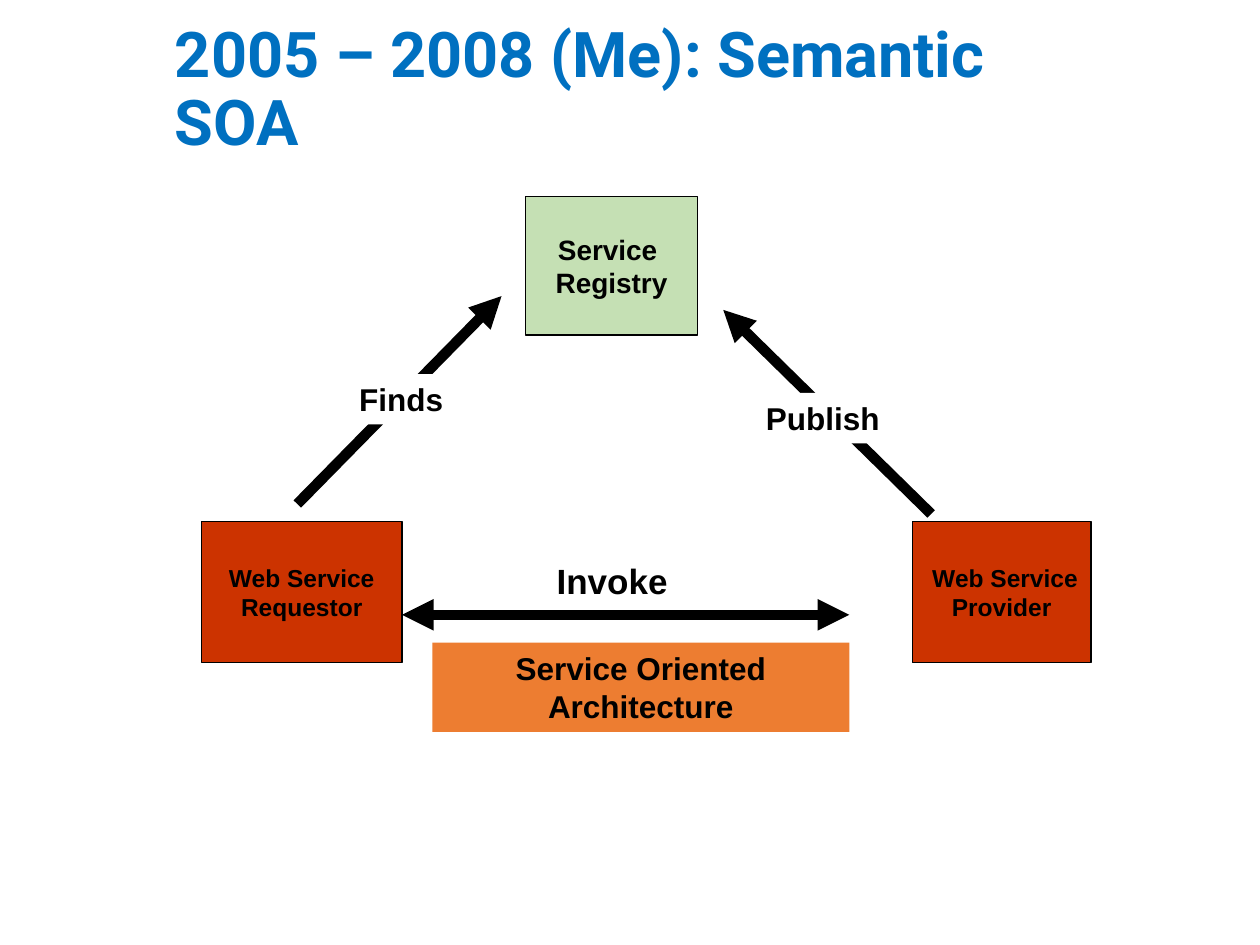
from lxml import etree
from pptx import Presentation
from pptx.dml.color import RGBColor
from pptx.enum import shapes, text
from pptx.oxml.ns import qn
from pptx.util import Pt

BLACK = "000000"
BOX_LINE = 0.75
ARROW_LINE = 6


def colour(value):
    """Turn a hex string into a colour."""
    return RGBColor.from_string(value)


def write(shape, lines, size, font="Arial", ink=BLACK, align=text.PP_ALIGN.CENTER,
          anchor=text.MSO_ANCHOR.TOP, wrap=False):
    """Write bold lines into a shape, one paragraph per line."""
    frame = shape.text_frame
    frame.word_wrap = wrap
    frame.vertical_anchor = anchor
    for number, line in enumerate(lines):
        para = frame.add_paragraph() if number else frame.paragraphs[0]
        para.alignment = align
        span = para.add_run()
        span.text = line
        span.font.name = font
        span.font.size = Pt(size)
        span.font.bold = True
        span.font.color.rgb = colour(ink)


def add_box(group, left, top, width, height, fill, outlined=False):
    """Add a filled rectangle, with a thin black outline on request."""
    box = group.shapes.add_shape(shapes.MSO_SHAPE.RECTANGLE,
                                 Pt(left), Pt(top), Pt(width), Pt(height))
    box.shadow.inherit = False
    box.fill.solid()
    box.fill.fore_color.rgb = colour(fill)
    if outlined:
        box.line.color.rgb = colour(BLACK)
        box.line.width = Pt(BOX_LINE)
    else:
        box.line.fill.background()
    return box


def add_arrow(group, start, end, both_ends=False):
    """Add a thick black arrow, pointing both ways on request."""
    arrow = group.shapes.add_connector(shapes.MSO_CONNECTOR.STRAIGHT,
                                       *map(Pt, start), *map(Pt, end))
    arrow.line.color.rgb = colour(BLACK)
    arrow.line.width = Pt(ARROW_LINE)
    line = arrow.line._get_or_add_ln()
    for tag in ("a:headEnd", "a:tailEnd") if both_ends else ("a:tailEnd",):
        etree.SubElement(line, qn(tag), type="triangle")
    etree.SubElement(arrow._element.spPr, qn("a:effectLst"))


def add_title(page, left, top, width, height):
    """Add the slide title."""
    title = page.shapes.add_textbox(Pt(left), Pt(top), Pt(width), Pt(height))
    write(title, ["2005 – 2008 (Me): Semantic SOA"], 36, "Roboto", "0070C0",
          text.PP_ALIGN.LEFT, text.MSO_ANCHOR.MIDDLE, True)
    title.text_frame.paragraphs[0].line_spacing = 0.9


def add_triangle(page, left, top):
    """Add the service triangle: three roles, their links and the caption."""
    group = page.shapes.add_group_shape()
    roles = [
        (406.1, 185.8, 102.2, 80.6, "CC3300", [" Web Service", "Provider"], 14),
        (0, 185.8, 114.5, 80.6, "CC3300", ["Web Service", "Requestor"], 14),
        (185, 0, 98.6, 79.2, "C5E0B4", ["Service ", "Registry"], 16),
    ]
    for x, y, width, height, fill, lines, size in roles:
        role = add_box(group, left + x, top + y, width, height, fill, True)
        write(role, lines, size, anchor=text.MSO_ANCHOR.MIDDLE)

    links = [
        ((114.5, 239), (370.1, 239), True),
        ((54.7, 175.7), (171.4, 56.9), False),
        ((416.9, 181.4), (298.1, 64.8), False),
    ]
    for (x1, y1), (x2, y2), both_ends in links:
        add_arrow(group, (left + x1, top + y1), (left + x2, top + y2), both_ends)

    labels = [(82.8, 101.5, 62.6, "Finds"), (315.4, 112.3, 79.2, "Publish")]
    for x, y, width, label in labels:
        write(add_box(group, left + x, top + y, width, 28.8, "FFFFFF"), [label], 18)

    invoke = group.shapes.add_textbox(Pt(left + 195.8), Pt(top + 203.8), Pt(77.8), Pt(31))
    write(invoke, ["Invoke"], 20, align=text.PP_ALIGN.LEFT)

    caption = add_box(group, left + 131.8, top + 254.9, 238.3, 51.1, "ED7D31")
    write(caption, ["Service Oriented Architecture"], 18, wrap=True)


def main():
    """Build the slide and save it."""
    deck = Presentation()
    deck.slide_width, deck.slide_height = Pt(720), Pt(540)
    page = deck.slides.add_slide(deck.slide_layouts[6])
    add_title(page, 92.9, 28.8, 512.6, 46.8)
    add_triangle(page, 115.2, 112.3)
    deck.save("out.pptx")


if __name__ == "__main__":
    main()
